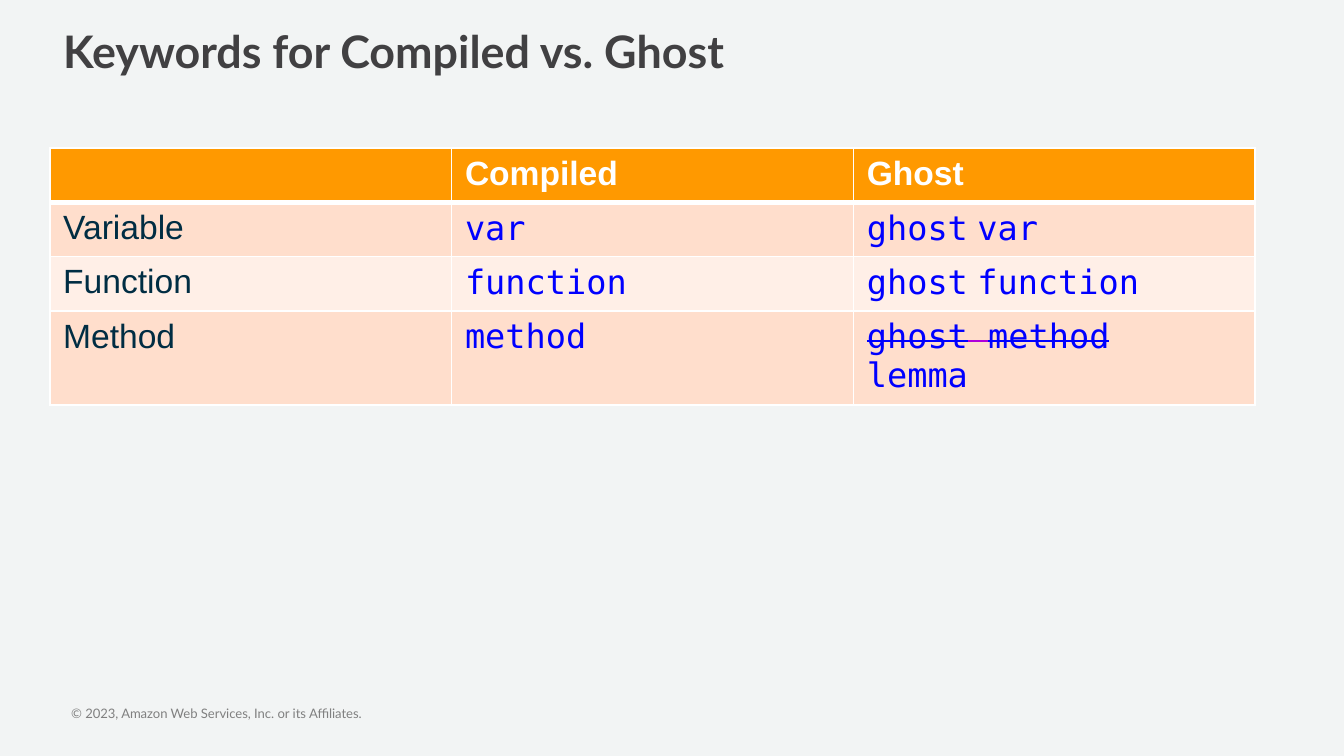
import pptx
import pptx.dml.color
import pptx.enum.text
import pptx.oxml
import pptx.oxml.ns
import pptx.util

TITLE = "Keywords for Compiled vs. Ghost"
COPYRIGHT = "© 2023, Amazon Web Services, Inc. or its Affiliates."
TABLE_ROWS = [
    [[], [("Compiled", "header")], [("Ghost", "header")]],
    [[("Variable", "label")], [("var", "code")],
     [("ghost", "code"), (" ", "label"), ("var", "code")]],
    [[("Function", "label")], [("function", "code")],
     [("ghost", "code"), (" ", "label"), ("function", "code")]],
    [[("Method", "label")], [("method", "code")],
     [("ghost", "struck"), (" ", "struck_space"), ("method", "struck"),
      ("\n", "code"), ("lemma", "code")]],
]

CODE = {"name": "DejaVu Sans Mono", "size": 18, "color": "0000FF", "bold": False}
THEME = {
    "background": "F2F4F4",
    "header_fill": "FF9900",
    "band_fills": ["FFDECC", "FFEFE7"],
    "border": "FFFFFF",
    "text": {
        "title": {"name": "Lato", "size": 24, "color": "414042", "bold": True},
        "copyright": {"name": "Lato", "size": 7, "color": "808080", "bold": False},
        "header": {"name": "Arial", "size": 18, "color": "FFFFFF", "bold": True},
        "label": {"name": "Arial", "size": 18, "color": "002D43", "bold": False},
        "code": CODE,
        "struck": {**CODE, "strike": True},
        "struck_space": {**CODE, "color": "AF00DB", "strike": True},
    },
}
SLIDE_WIDTH = 10
LEFT, WIDTH = 0.37, 8.97
TABLE_TOP, TABLE_HEIGHT = 1.1, 1.62


def rgb(value):
    return pptx.dml.color.RGBColor.from_string(value)


def add_run(paragraph, text, style):
    run = paragraph.add_run()
    run.text = text
    for attribute, value in THEME["text"][style].items():
        if attribute == "color":
            run.font.color.rgb = rgb(value)
        elif attribute == "strike":
            run._r.get_or_add_rPr().set("strike", "sngStrike")
        else:
            setattr(run.font, attribute, pptx.util.Pt(value) if attribute == "size" else value)


def apply_format(target, **values):
    for attribute, value in values.items():
        setattr(target, attribute, value)


def set_borders(cell, widths):
    properties = cell._tc.get_or_add_tcPr()
    for index, (side, width) in enumerate(widths.items()):
        properties.insert(index, pptx.oxml.parse_xml(
            f'<a:ln{side} {pptx.oxml.ns.nsdecls("a")} w="{pptx.util.Pt(width)}">'
            f'<a:solidFill><a:srgbClr val="{THEME["border"]}"/></a:solidFill></a:ln{side}>'))


def add_title(slide):
    title = slide.shapes.title
    apply_format(title, left=pptx.util.Inches(LEFT), top=pptx.util.Inches(0.13),
                 width=pptx.util.Inches(WIDTH), height=pptx.util.Inches(0.6))
    apply_format(title.text_frame, word_wrap=True,
                 vertical_anchor=pptx.enum.text.MSO_ANCHOR.TOP)
    paragraph = title.text_frame.paragraphs[0]
    paragraph.alignment = pptx.enum.text.PP_ALIGN.LEFT
    add_run(paragraph, TITLE, "title")


def add_copyright(slide):
    box = slide.shapes.add_textbox(*map(pptx.util.Inches, (0.53, 5.25, 4.86, 0.12)))
    apply_format(box.text_frame, word_wrap=True, margin_left=0, margin_top=0,
                 margin_right=0, margin_bottom=0)
    add_run(box.text_frame.paragraphs[0], COPYRIGHT, "copyright")


def add_keyword_table(slide):
    table = slide.shapes.add_table(
        len(TABLE_ROWS), len(TABLE_ROWS[0]),
        *map(pptx.util.Inches, (LEFT, TABLE_TOP, WIDTH, TABLE_HEIGHT))).table
    for row_index, row in enumerate(TABLE_ROWS):
        fill = THEME["band_fills"][(row_index - 1) % 2] if row_index else THEME["header_fill"]
        widths = {"L": 1, "R": 1, "T": 3 if row_index == 1 else 1,
                  "B": 3 if row_index == 0 else 1}
        for column_index, runs in enumerate(row):
            cell = table.cell(row_index, column_index)
            cell.fill.solid()
            cell.fill.fore_color.rgb = rgb(fill)
            set_borders(cell, widths)
            paragraph = cell.text_frame.paragraphs[0]
            for text, style in runs:
                if text == "\n":
                    paragraph.add_line_break()
                else:
                    add_run(paragraph, text, style)


def main():
    presentation = pptx.Presentation()
    presentation.slide_width = pptx.util.Inches(SLIDE_WIDTH)
    presentation.slide_height = pptx.util.Inches(SLIDE_WIDTH * 9 / 16)
    slide = presentation.slides.add_slide(presentation.slide_layouts[5])
    slide.background.fill.solid()
    slide.background.fill.fore_color.rgb = rgb(THEME["background"])
    add_copyright(slide)
    add_title(slide)
    add_keyword_table(slide)
    presentation.save("out.pptx")


if __name__ == "__main__":
    main()
